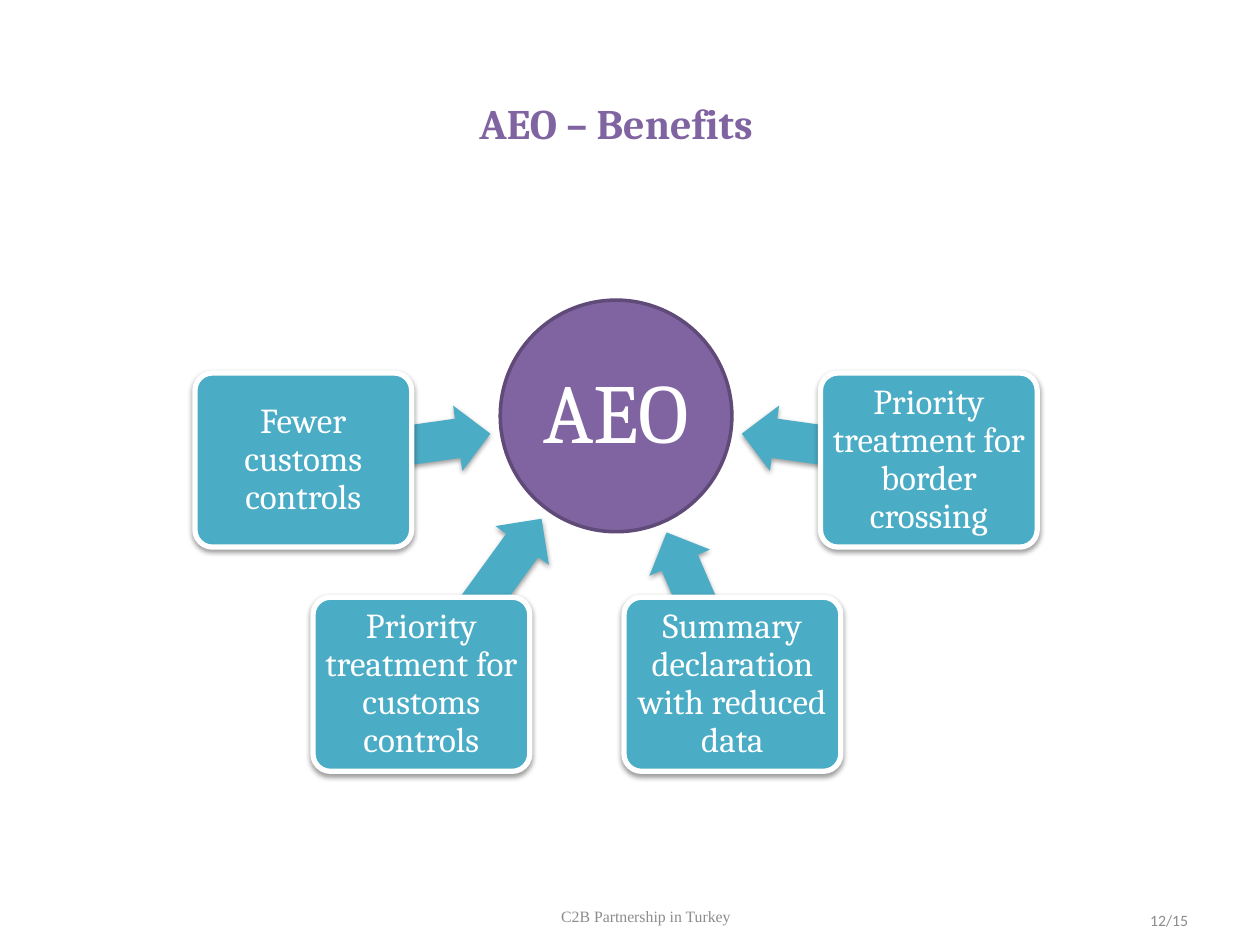
import math

from lxml import etree
from pptx import Presentation
from pptx import util as u
from pptx.dml.color import RGBColor
from pptx.enum import shapes, text
from pptx.oxml import ns

PURPLE, DARK_PURPLE, TEAL, WHITE, GREY = "8064A2", "5F4A78", "4BACC6", "FFFFFF", "8C8C8C"
CENTER, RIGHT = text.PP_ALIGN.CENTER, text.PP_ALIGN.RIGHT
TOP, MIDDLE = text.MSO_ANCHOR.TOP, text.MSO_ANCHOR.MIDDLE


def color(value):
    return RGBColor.from_string(value)


def write(sp, words, size, font, fill, align=CENTER, anchor=MIDDLE, bold=False, margin=0.1):
    tf = sp.text_frame
    tf.word_wrap = True
    tf.vertical_anchor = anchor
    tf.margin_left = tf.margin_right = tf.margin_top = tf.margin_bottom = u.Cm(margin)
    p = tf.paragraphs[0]
    p.text = words
    p.alignment = align
    p.font.size = u.Pt(size)
    p.font.name = font
    p.font.bold = bold
    p.font.color.rgb = color(fill)
    return p


def add_label(slide, box, *args, **kwargs):
    sp = slide.shapes.add_textbox(*map(u.Cm, box))
    write(sp, *args, **kwargs)


def add_shape(slide, kind, box, fill, line=None, width=0):
    sp = slide.shapes.add_shape(kind, *map(u.Cm, box))
    sp.shadow.inherit = False
    sp.fill.solid()
    sp.fill.fore_color.rgb = color(fill)
    if line:
        sp.line.color.rgb = color(line)
        sp.line.width = u.Pt(width)
    else:
        sp.line.fill.background()
    return sp


def add_shadow(sp):
    effects = sp._element.spPr.find(ns.qn("a:effectLst"))
    shadow = etree.SubElement(effects, ns.qn("a:outerShdw"), blurRad=str(u.Pt(3.1)),
                              dist=str(u.Pt(1.6)), dir="5400000", rotWithShape="0")
    black = etree.SubElement(shadow, ns.qn("a:srgbClr"), val="000000")
    etree.SubElement(black, ns.qn("a:alpha"), val="38000")


def add_arrow(slide, tail, hub, gap, height):
    dx, dy = tail[0] - hub[0], tail[1] - hub[1]
    distance = math.hypot(dx, dy)
    length = distance - gap
    share = length / 2 / distance
    x, y = tail[0] - dx * share, tail[1] - dy * share
    sp = add_shape(slide, shapes.MSO_SHAPE.LEFT_ARROW,
                   (x - length / 2, y - height / 2, length, height), TEAL)
    sp.adjustments[0], sp.adjustments[1] = 0.6, 0.5
    sp.rotation = math.degrees(math.atan2(dy, dx))
    add_shadow(sp)


def add_benefit(slide, box, words):
    sp = add_shape(slide, shapes.MSO_SHAPE.ROUNDED_RECTANGLE, box, TEAL, WHITE, 3)
    sp.adjustments[0] = 0.1
    add_shadow(sp)
    write(sp, words, 20, "Cambria", WHITE, margin=0).line_spacing = 0.9


def add_diagram(slide, box, benefits):
    left, top, width, height = box
    diameter, card_w, card_h = 4.67, 4.37, 3.51
    hub = (left + width / 2, top + diameter / 2)
    sp = add_shape(slide, shapes.MSO_SHAPE.OVAL,
                   (hub[0] - diameter / 2, top, diameter, diameter), PURPLE, DARK_PURPLE, 2)
    write(sp, "AEO", 48, "Cambria", WHITE, margin=0).line_spacing = 0.9
    upper, lower = top + 1.47, top + height - card_h
    spots = [(left + width - card_w, upper), (left + 2.38, lower),
             (left + width - card_w - 3.96, lower), (left, upper)]
    for (x, y), words in zip(spots, benefits):
        add_arrow(slide, (x + card_w / 2, y + card_h / 2), hub, 2.56, 1.33)
        add_benefit(slide, (x, y, card_w, card_h), words)


def add_footer(slide, box):
    left, top, width, height = box
    add_label(slide, (left, top, 8.66, height), "C2B Partnership in Turkey",
              9, "Times New Roman", GREY, margin=0.18)
    add_label(slide, (left + width - 5.92, top + 0.08, 5.92, height), "12/15",
              9, "Calibri", GREY, align=RIGHT, margin=0.18)


def main():
    prs = Presentation()
    prs.slide_width, prs.slide_height = u.Cm(25.4), u.Cm(19.05)
    slide = prs.slides.add_slide(prs.slide_layouts[6])
    add_footer(slide, (8.69, 17.96, 15.44, 1.02))
    add_diagram(slide, (3.93, 6.05, 16.98, 9.5), [
        "Priority treatment for border crossing",
        "Priority treatment for customs controls",
        "Summary declaration with reduced data",
        "Fewer customs controls",
    ])
    add_label(slide, (4.75, 1.83, 15.34, 1.12), "AEO – Benefits",
              24, "Cambria", PURPLE, anchor=TOP, bold=True, margin=0.13)
    prs.save("out.pptx")


if __name__ == "__main__":
    main()
